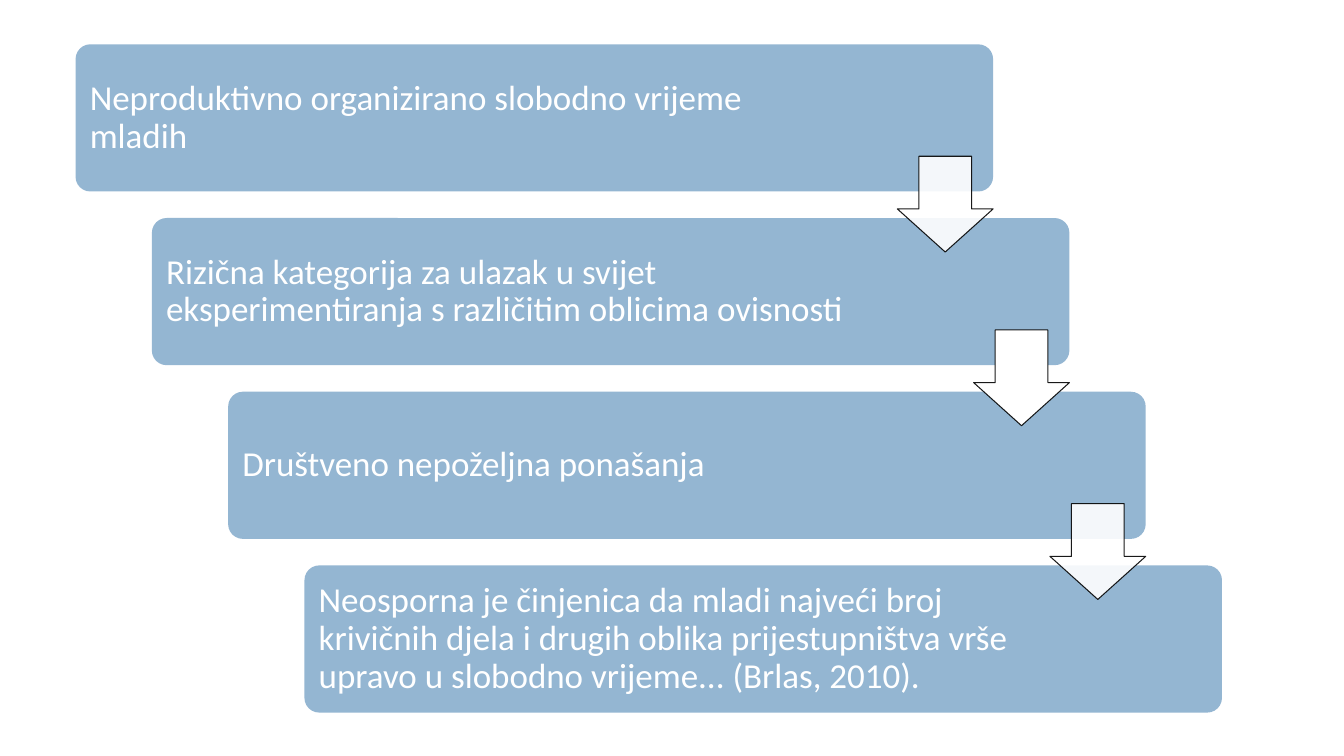
from pptx import Presentation
from pptx.dml.color import RGBColor
from pptx.enum.shapes import MSO_SHAPE
from pptx.enum.text import MSO_ANCHOR, PP_ALIGN
from pptx.oxml.ns import qn
from pptx.util import Inches, Pt
from lxml import etree

ROUNDED = MSO_SHAPE.ROUNDED_RECTANGLE
DOWN_ARROW = MSO_SHAPE.DOWN_ARROW
MIDDLE = MSO_ANCHOR.MIDDLE
LEFT = PP_ALIGN.LEFT

BLUE, WHITE, BLACK = "94B6D2", "FFFFFF", "000000"
CARD_WIDTH, CARD_HEIGHT = 9.1, 1.46
ARROW_SIZE = 0.95
ARROW_DROP = 1.11  # from the card's top to the arrow's top
ARROW_FILL_OPACITIES = [90, 100, 90]
ARROW_LINE_OPACITY = 90

STEPS = [
    "Neproduktivno organizirano slobodno vrijeme mladih",
    "Rizična kategorija za ulazak u svijet eksperimentiranja s različitim oblicima ovisnosti",
    "Društveno nepoželjna ponašanja",
    "Neosporna je činjenica da mladi najveći broj krivičnih djela i drugih oblika "
    "prijestupništva vrše upravo u slobodno vrijeme... (Brlas, 2010).",
]


def color(hex_value):
    return RGBColor.from_string(hex_value)


def set_fill(fill, hex_value, opacity=100):
    fill.solid()
    fill.fore_color.rgb = color(hex_value)
    if opacity < 100:
        color_element = fill._xPr.find(qn("a:solidFill"))[0]
        etree.SubElement(color_element, qn("a:alpha"), val=str(opacity * 1000))


def add_card(slide, left, top, text):
    shape = slide.shapes.add_shape(
        ROUNDED, Inches(left), Inches(top), Inches(CARD_WIDTH), Inches(CARD_HEIGHT))
    shape.adjustments[0] = 0.1
    shape.shadow.inherit = False
    set_fill(shape.fill, BLUE)
    shape.line.fill.background()

    # The wide right margin keeps the text clear of the arrow
    text_frame = shape.text_frame
    text_frame.word_wrap = True
    text_frame.vertical_anchor = MIDDLE
    text_frame.margin_left = text_frame.margin_top = text_frame.margin_bottom = Inches(0.1)
    text_frame.margin_right = Inches(1.8)
    text_frame.text = text
    paragraph = text_frame.paragraphs[0]
    paragraph.alignment = LEFT
    paragraph.line_spacing = 0.9
    font = paragraph.runs[0].font
    font.name = "Calibri"
    font.size = Pt(25)
    font.color.rgb = color(WHITE)


def add_arrow(slide, left, top, opacity):
    shape = slide.shapes.add_shape(
        DOWN_ARROW, Inches(left), Inches(top), Inches(ARROW_SIZE), Inches(ARROW_SIZE))
    shape.adjustments[0] = 0.55
    shape.adjustments[1] = 0.45
    shape.shadow.inherit = False
    set_fill(shape.fill, WHITE, opacity)
    shape.line.width = Pt(0.75)
    set_fill(shape.line.fill, BLACK, ARROW_LINE_OPACITY)


def add_staircase(slide, left, top, width, height):
    gaps = len(STEPS) - 1
    step_x = (width - CARD_WIDTH) / gaps
    step_y = (height - CARD_HEIGHT) / gaps

    # Cards descending to the right
    for index, text in enumerate(STEPS):
        add_card(slide, left + index * step_x, top + index * step_y, text)

    # Arrows flush with the right edge of the card they leave
    arrow_left = left + CARD_WIDTH - ARROW_SIZE
    for index, opacity in enumerate(ARROW_FILL_OPACITIES):
        add_arrow(slide, arrow_left + index * step_x,
                  top + ARROW_DROP + index * step_y, opacity)


def main():
    presentation = Presentation()
    presentation.slide_width = Inches(13.33)
    presentation.slide_height = Inches(7.5)
    slide = presentation.slides.add_slide(presentation.slide_layouts[6])
    add_staircase(slide, 0.75, 0.44, 11.37, 6.63)
    presentation.save("out.pptx")


if __name__ == "__main__":
    main()
